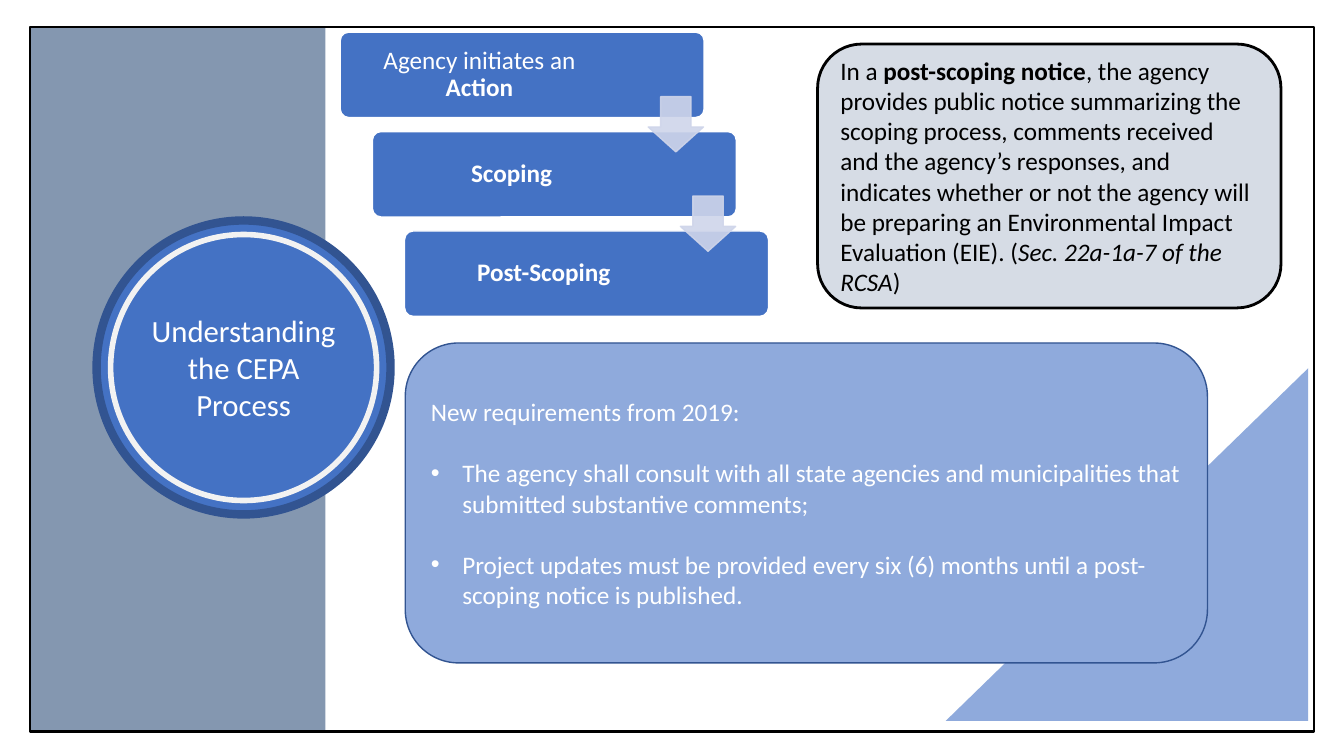
from dataclasses import dataclass

from lxml.etree import SubElement
from pptx import Presentation
from pptx.dml.color import RGBColor
from pptx.enum.shapes import MSO_SHAPE as Preset
from pptx.enum.text import MSO_ANCHOR as Anchor, MSO_AUTO_SIZE as AutoSize, PP_ALIGN as Align
from pptx.oxml.ns import qn
from pptx.util import Pt


@dataclass(frozen=True)
class Theme:
    font: str = "Calibri"
    body_size: float = 18
    title_size: float = 22
    white: str = "FFFFFF"
    black: str = "000000"
    blue: str = "4472C4"
    dark_blue: str = "325491"
    light_blue: str = "8FAADC"
    slate: str = "8497B0"
    pale: str = "D6DCE5"
    arrow: str = "CFD5EA"
    ring: str = "F2F2F2"


class SlideBuilder:
    def __init__(self, page, theme):
        self.page = page
        self.theme = theme

    def shape(self, preset, bounds, fill=None, line=None, width=1, adjust=()):
        box = self.page.shapes.add_shape(preset, *map(Pt, bounds))
        box.shadow.inherit = False
        if fill:
            box.fill.solid()
            box.fill.fore_color.rgb = RGBColor.from_string(fill)
        else:
            box.fill.background()
        if line:
            box.line.color.rgb = RGBColor.from_string(line)
            box.line.width = Pt(width)
        else:
            box.line.fill.background()
        for index, value in enumerate(adjust):
            box.adjustments[index] = value
        return box

    def style(self, para, size, color, align=Align.LEFT, spacing=1.0):
        para.alignment = align
        para.line_spacing = spacing
        para.font.name = self.theme.font
        para.font.size = Pt(size)
        para.font.color.rgb = RGBColor.from_string(color)

    def spans(self, para, parts):
        for text, emphasis in parts:
            span = para.add_run()
            span.text = text
            if emphasis == "bold":
                span.font.bold = True
            elif emphasis == "italic":
                span.font.italic = True

    def text(self, box, parts, color, align=Align.LEFT, spacing=1.0):
        frame = box.text_frame
        frame.word_wrap = True
        frame.vertical_anchor = Anchor.MIDDLE
        para = frame.paragraphs[0]
        self.style(para, self.theme.body_size, color, align, spacing)
        self.spans(para, parts)
        return frame

    def bullet(self, frame, text):
        para = frame.add_paragraph()
        properties = para._p.get_or_add_pPr()
        properties.set("marL", str(Pt(22.5)))
        properties.set("indent", str(Pt(-22.5)))
        SubElement(properties, qn("a:buFont"), typeface="Arial")
        SubElement(properties, qn("a:buChar"), char="•")
        para.space_before = Pt(22)
        self.style(para, self.theme.body_size, self.theme.white)
        para.add_run().text = text

    def step(self, bounds, parts):
        box = self.shape(Preset.ROUNDED_RECTANGLE, bounds, self.theme.blue,
                         self.theme.white, adjust=[0.1])
        frame = self.text(box, parts, self.theme.white, Align.CENTER, 0.9)
        frame.margin_left, frame.margin_right = Pt(6), Pt(67)
        frame.margin_top = frame.margin_bottom = Pt(5)

    def down_arrow(self, bounds):
        color = self.theme.arrow
        arrow = self.shape(Preset.DOWN_ARROW, bounds, color, color, adjust=[0.55, 0.45])
        for tint in arrow.element.spPr.iter(qn("a:srgbClr")):
            SubElement(tint, qn("a:alpha"), val="90000")

    def title(self, text, bounds):
        title = self.page.shapes.title
        title.left, title.top, title.width, title.height = map(Pt, bounds)
        frame = title.text_frame
        frame.word_wrap = True
        frame.auto_size = AutoSize.NONE
        frame.vertical_anchor = Anchor.MIDDLE
        frame.margin_left = frame.margin_right = 0
        frame.margin_top = frame.margin_bottom = 0
        frame.text = text
        self.style(frame.paragraphs[0], self.theme.title_size, self.theme.white, Align.CENTER)
        self.page.shapes[-1].element.addnext(title.element)


def main():
    theme = Theme()
    deck = Presentation()
    deck.slide_width, deck.slide_height = Pt(960), Pt(540)
    page = deck.slides.add_slide(deck.slide_layouts[5])
    builder = SlideBuilder(page, theme)

    triangle = builder.shape(Preset.RIGHT_TRIANGLE, (675.5, 263, 259, 252), theme.light_blue)
    triangle.element.spPr.get_or_add_xfrm().set("flipH", "1")
    builder.shape(Preset.RECTANGLE, (21, 19.5, 211.5, 503), theme.slate)
    builder.shape(Preset.RECTANGLE, (21.5, 19.5, 917, 503), line=theme.black, width=1.5)

    notice = builder.shape(Preset.ROUNDED_RECTANGLE, (584, 31.5, 331, 188.5),
                           theme.pale, theme.black, 2)
    builder.text(notice, [
        ("In a ", None),
        ("post-scoping notice", "bold"),
        (", the agency provides public notice summarizing the scoping process, comments "
         "received and the agency’s responses, and indicates whether or not the agency will "
         "be preparing an Environmental Impact Evaluation (EIE). (", None),
        ("Sec. 22a-1a-7 of the RCSA", "italic"),
        (")", None),
    ], theme.black)

    steps = [
        [("Agency initiates an ", None), ("Action", "bold")],
        [("Scoping", "bold")],
        [("Post-Scoping", "bold")],
    ]
    shift, drop = 23, 71
    for index, parts in enumerate(steps):
        builder.step((243 + index * shift, 23 + index * drop, 260, 61), parts)
    for index in range(len(steps) - 1):
        builder.down_arrow((463 + index * shift, 69 + index * drop, 39.5, 39.5))

    requirements = builder.shape(Preset.ROUNDED_RECTANGLE, (289.5, 245, 573, 228.5),
                                 theme.light_blue, theme.dark_blue)
    frame = builder.text(requirements, [("New requirements from 2019:", None)], theme.white)
    for item in (
        "The agency shall consult with all state agencies and municipalities that "
        "submitted substantive comments;",
        "Project updates must be provided every six (6) months until a post-scoping "
        "notice is published.",
    ):
        builder.bullet(frame, item)

    builder.shape(Preset.OVAL, (69, 157.5, 210, 210), theme.blue, theme.dark_blue, 6)
    builder.shape(Preset.OVAL, (79, 167.5, 190, 190), line=theme.ring, width=4)
    builder.title("Understanding the CEPA Process", (100, 195.5, 148, 134))

    deck.save("out.pptx")


if __name__ == "__main__":
    main()
